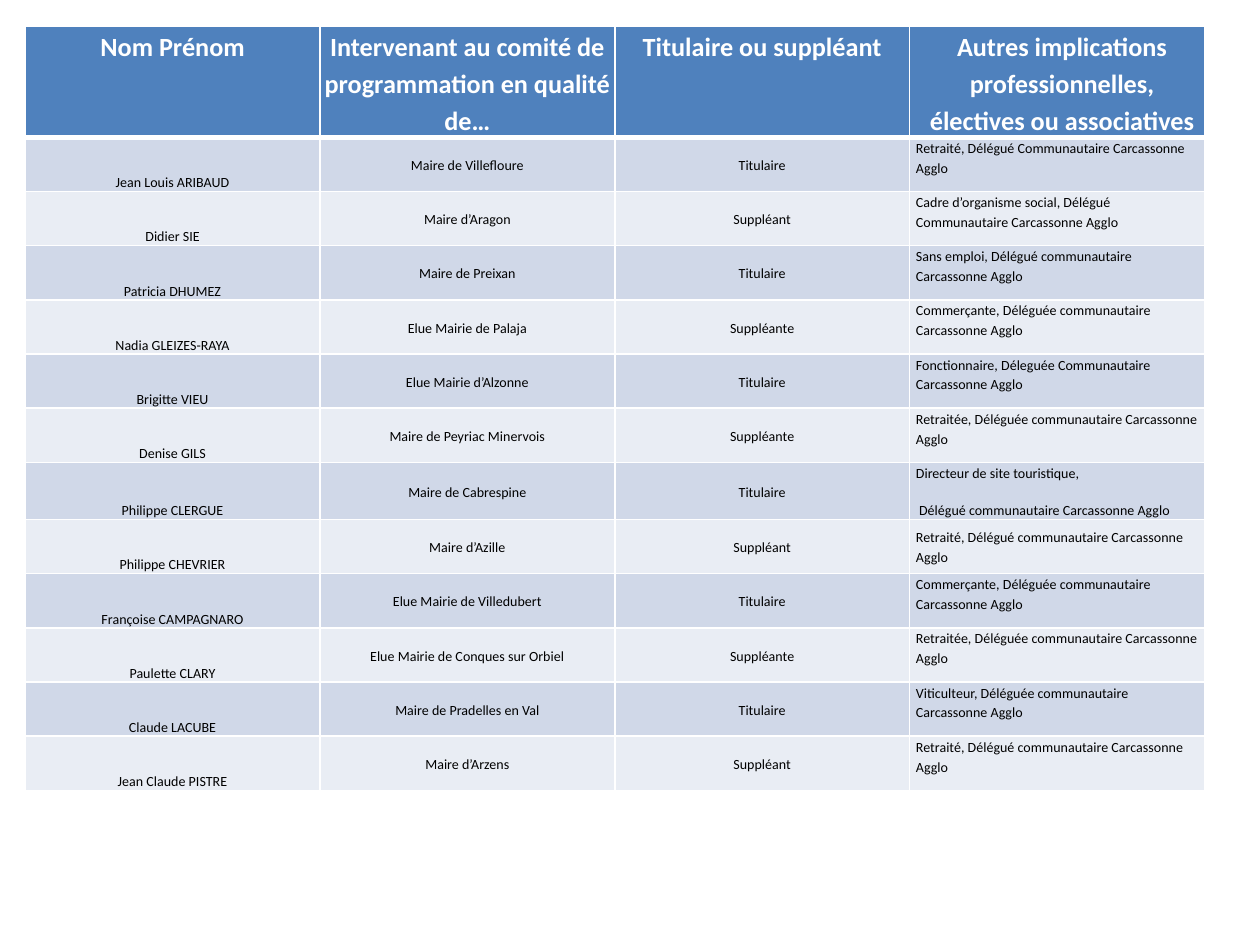
from lxml import etree
from pptx import Presentation
from pptx.dml.color import RGBColor
from pptx.enum import text as t
from pptx.oxml import ns
from pptx.util import Inches, Pt

MID, TOP, LOW = t.MSO_ANCHOR.MIDDLE, t.MSO_ANCHOR.TOP, t.MSO_ANCHOR.BOTTOM
LEFT, MIDST = t.PP_ALIGN.LEFT, t.PP_ALIGN.CENTER
HEADS = [
    "Nom Prénom",
    "Intervenant au comité de programmation en qualité de…",
    "Titulaire ou suppléant",
    "Autres implications professionnelles, électives ou associatives",
]
ROWS = [
    ("Jean Louis ARIBAUD", "Maire de Villefloure", "Titulaire",
     "Retraité, Délégué Communautaire Carcassonne Agglo"),
    ("Didier SIE", "Maire d’Aragon", "Suppléant",
     "Cadre d’organisme social, Délégué Communautaire Carcassonne Agglo"),
    ("Patricia DHUMEZ", "Maire de Preixan", "Titulaire",
     "Sans emploi, Délégué communautaire Carcassonne Agglo"),
    ("Nadia GLEIZES-RAYA", "Elue Mairie de Palaja", "Suppléante",
     "Commerçante, Déléguée communautaire Carcassonne Agglo"),
    ("Brigitte VIEU", "Elue Mairie d’Alzonne", "Titulaire",
     "Fonctionnaire, Déleguée Communautaire Carcassonne Agglo"),
    ("Denise GILS", "Maire de Peyriac Minervois", "Suppléante",
     "Retraitée, Déléguée communautaire Carcassonne Agglo"),
    ("Philippe CLERGUE", "Maire de Cabrespine", "Titulaire",
     "Directeur de site touristique,\n Délégué communautaire Carcassonne Agglo"),
    ("Philippe CHEVRIER", "Maire d’Azille", "Suppléant",
     "Retraité, Délégué communautaire Carcassonne Agglo"),
    ("Françoise CAMPAGNARO", "Elue Mairie de Villedubert", "Titulaire",
     "Commerçante, Déléguée communautaire Carcassonne Agglo"),
    ("Paulette CLARY", "Elue Mairie de Conques sur Orbiel", "Suppléante",
     "Retraitée, Déléguée communautaire Carcassonne Agglo"),
    ("Claude LACUBE", "Maire de Pradelles en Val", "Titulaire",
     "Viticulteur, Déléguée communautaire Carcassonne Agglo"),
    ("Jean Claude PISTRE", "Maire d’Arzens", "Suppléant",
     "Retraité, Délégué communautaire Carcassonne Agglo"),
]


def rgb(code):
    return RGBColor.from_string(code)


def write(cell, words, size=8, color="000000", bold=False, align=MIDST,
          anchor=MID, side=0.05, fill="FFFFFF", edges=None):
    """Fill one cell with text, colour and white borders of given widths."""
    cell.fill.solid()
    cell.fill.fore_color.rgb = rgb(fill)
    cell.vertical_anchor = anchor
    cell.margin_left = cell.margin_right = Inches(side)
    cell.margin_top = cell.margin_bottom = 0
    cell.text_frame.text = words
    for para in cell.text_frame.paragraphs:
        para.alignment = align
        para.line_spacing = 1.15
        para.space_after = Pt(10)
        font = para.runs[0].font
        font.name, font.size, font.bold = "Calibri", Pt(size), bold
        font.color.rgb = rgb(color)
    props = cell._tc.get_or_add_tcPr()
    for spot, (edge, width) in enumerate((edges or {}).items()):
        line = etree.Element(ns.qn("a:ln" + edge), w=str(Pt(width)))
        paint = etree.SubElement(line, ns.qn("a:solidFill"))
        etree.SubElement(paint, ns.qn("a:srgbClr"), val="FFFFFF")
        props.insert(spot, line)


deck = Presentation()
deck.slide_width, deck.slide_height = Inches(10), Inches(7.5)
slide = deck.slides.add_slide(deck.slide_layouts[6])

# Table grid
grid = slide.shapes.add_table(len(ROWS) + 1, len(HEADS), Inches(0.2),
                              Inches(0.21), Inches(9.37), Inches(6.21)).table
for col in grid.columns:
    col.width = Inches(2.34)
for row in grid.rows:
    row.height = Inches(0.43)
grid.rows[0].height = Inches(0.88)

# Header row
for c, head in enumerate(HEADS):
    write(grid.cell(0, c), head, size=15, color="FFFFFF", bold=True,
          anchor=TOP, side=0, fill="4F81BD",
          edges={"L": 1, "R": 1, "T": 1, "B": 3})
last = grid.cell(0, 3).text_frame.paragraphs[0]
last._p.get_or_add_pPr().set("marL", str(Inches(0.08)))

# Members, in banded rows
for r, member in enumerate(ROWS, 1):
    band = "D0D8E8" if r % 2 else "E9EDF4"
    note = MID if member[0] == "Philippe CHEVRIER" else TOP
    for c, words in enumerate(member):
        write(grid.cell(r, c), words, fill=band,
              align=LEFT if c == 3 else MIDST,
              anchor=(LOW, MID, MID, note)[c],
              edges={"L": 1, "R": 1, "B": 1})

deck.save("out.pptx")
